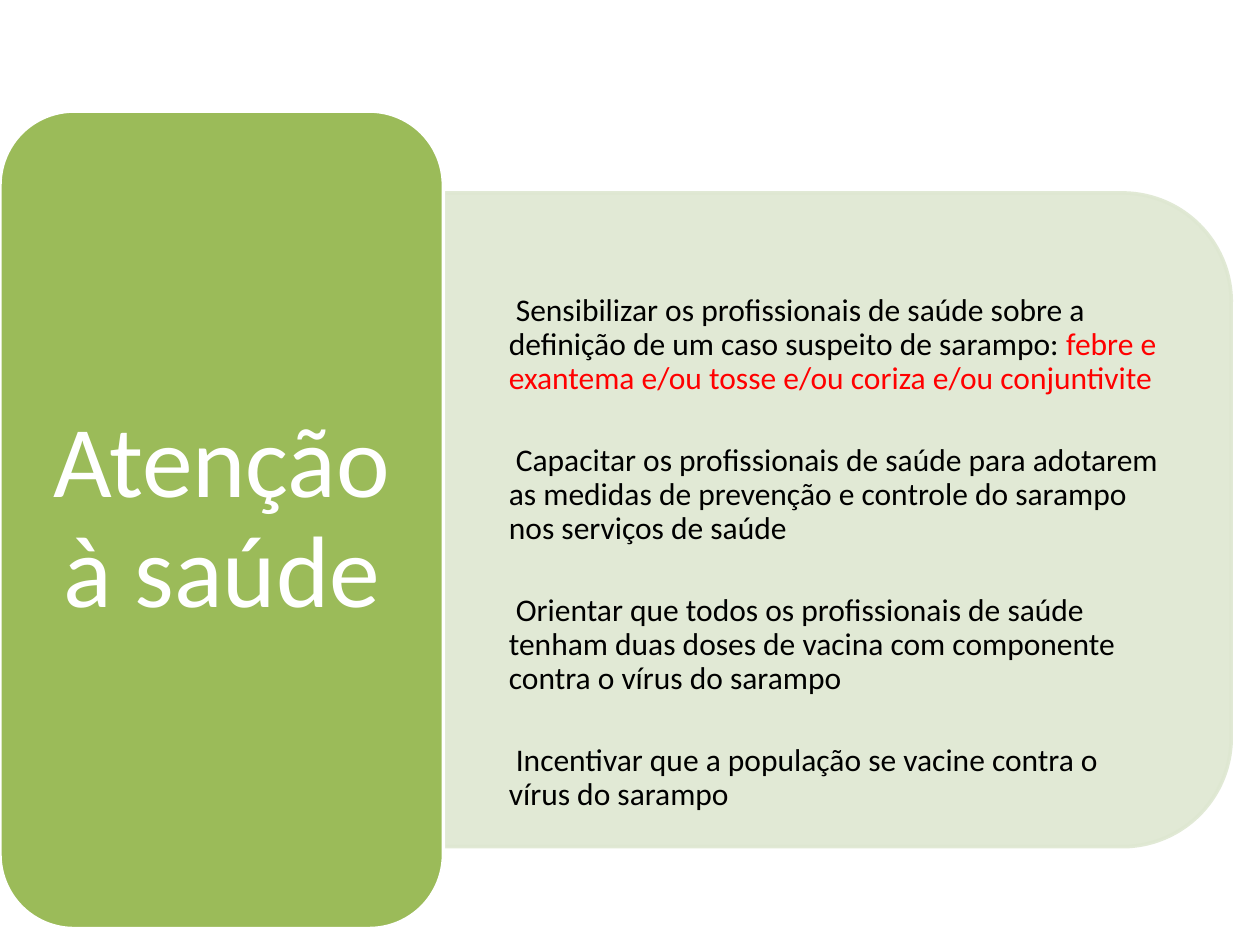
from lxml import etree
from pptx import Presentation, util as u
from pptx.dml.color import RGBColor
from pptx.enum import shapes, text
from pptx.oxml.ns import qn

COLORS = {"green": "9BBB59", "pale": "DEE7D1", "white": "FFFFFF",
          "black": "000000", "red": "FF0000"}
FONT = "Calibri"

HEADING = [[("Atenção à saúde", "white")]]
ACTIONS = [
    [("Sensibilizar os profissionais de saúde sobre a definição de um caso "
      "suspeito de sarampo: ", "black"),
     ("febre e exantema e/ou tosse e/ou coriza e/ou conjuntivite", "red")],
    [("Capacitar os profissionais de saúde para adotarem as medidas de "
      "prevenção e controle do sarampo nos serviços de saúde", "black")],
    [("Orientar que todos os profissionais de saúde tenham duas doses de "
      "vacina com componente contra o vírus do sarampo", "black")],
    [("Incentivar que a população se vacine contra o vírus do sarampo", "black")],
]

SLIDE_W, SLIDE_H = 25.4, 19.05
HEADING_W, HEADING_H, HEADING_TOP = 8.94, 16.48, 2.24
PANEL_W, PANEL_H = 15.88, 13.18
MIDDLE = HEADING_TOP + HEADING_H / 2


def add_block(slide, kind, left, top, width, height, fill, line, alpha=None):
    block = slide.shapes.add_shape(kind, u.Cm(left), u.Cm(top), u.Cm(width), u.Cm(height))
    block.shadow.inherit = False
    block.fill.solid()
    block.fill.fore_color.rgb = RGBColor.from_string(COLORS[fill])
    block.line.color.rgb = RGBColor.from_string(COLORS[line])
    block.line.width = u.Pt(2)
    if alpha:
        for color in block.element.spPr.iter(qn("a:srgbClr")):
            etree.SubElement(color, qn("a:alpha"), val=str(alpha * 1000))
    return block


def write(frame, paragraphs, size, align, anchor, inset=0, gap=0, indent=0):
    frame.word_wrap = True
    frame.vertical_anchor = anchor
    frame.margin_left = frame.margin_right = u.Cm(inset)
    frame.margin_top = frame.margin_bottom = 0
    for i, runs in enumerate(paragraphs):
        paragraph = frame.paragraphs[0] if i == 0 else frame.add_paragraph()
        paragraph.alignment = align
        paragraph.line_spacing = 0.9
        paragraph.space_before = u.Pt(gap if i else 0)
        if indent:
            paragraph._p.get_or_add_pPr().set("indent", str(u.Cm(indent)))
        for words, color in runs:
            run = paragraph.add_run()
            run.text = words
            run.font.name = FONT
            run.font.size = u.Pt(size)
            run.font.color.rgb = RGBColor.from_string(COLORS[color])


deck = Presentation()
deck.slide_width, deck.slide_height = u.Cm(SLIDE_W), u.Cm(SLIDE_H)
slide = deck.slides.add_slide(deck.slide_layouts[6])

panel = add_block(slide, shapes.MSO_SHAPE.ROUND_2_SAME_RECTANGLE,
                  HEADING_W + (PANEL_W - PANEL_H) / 2, MIDDLE - PANEL_W / 2,
                  PANEL_H, PANEL_W, "pale", "pale", alpha=90)
panel.rotation = 90

actions = slide.shapes.add_textbox(u.Cm(10.26), u.Cm(5.93), u.Cm(13.25), u.Cm(10.5))
write(actions.text_frame, ACTIONS, 18, text.PP_ALIGN.LEFT, text.MSO_ANCHOR.TOP,
      gap=27.4, indent=0.14)

heading = add_block(slide, shapes.MSO_SHAPE.ROUNDED_RECTANGLE, 0, HEADING_TOP,
                    HEADING_W, HEADING_H, "green", "white")
write(heading.text_frame, HEADING, 58, text.PP_ALIGN.CENTER, text.MSO_ANCHOR.MIDDLE,
      inset=0.3)

deck.save("out.pptx")
